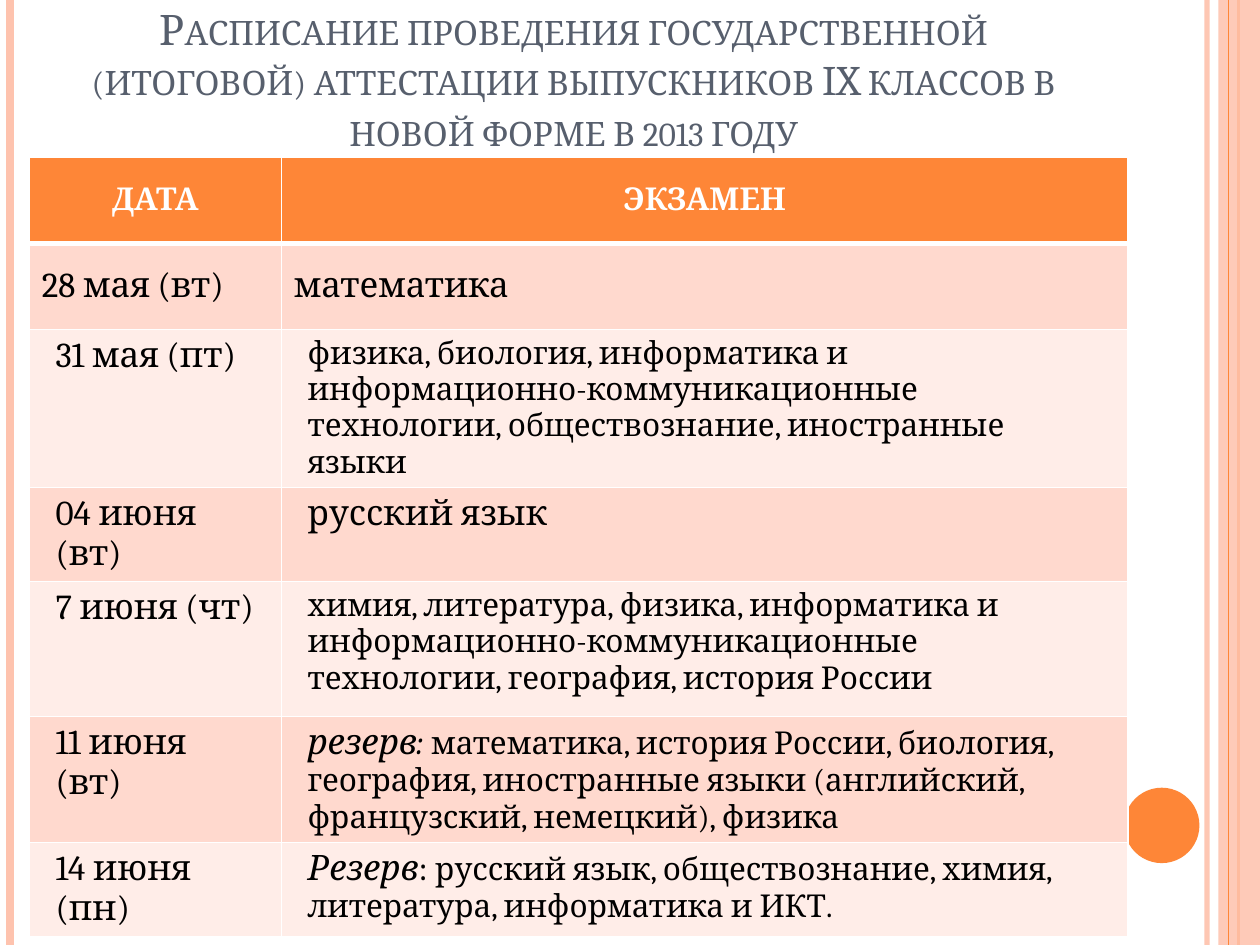
from lxml.etree import SubElement
from pptx import Presentation
from pptx.dml.color import RGBColor
from pptx.enum.shapes import MSO_CONNECTOR, MSO_SHAPE
from pptx.enum.text import MSO_ANCHOR, PP_ALIGN
from pptx.oxml.ns import qn
from pptx.util import Cm, Pt

COLORS = {
    "orange": "FE8637", "peach": "FEC3AE", "title": "575F6D", "white": "FFFFFF",
    "black": "000000", "odd": "FFD9CE", "even": "FFEDE8",
}
WIDTH, HEIGHT = 25.4, 19.05
TITLE = ("Расписание проведения государственной (итоговой) аттестации "
         "выпускников IX классов в новой форме в 2013 году")
EXAMS = [
    ("28 мая (вт)", [("математика", 20, False)]),
    ("31 мая (пт)", [("физика, биология, информатика и информационно-коммуникационные "
                      "технологии, обществознание, иностранные языки", 18, False)]),
    ("04 июня (вт)", [("русский язык", 20, False)]),
    ("7 июня (чт)", [("химия, литература, физика, информатика и информационно-коммуникационные "
                      "технологии, география, история России", 18, False)]),
    ("11 июня (вт)", [("резерв: ", 20, True),
                      ("математика, история России, биология, география, иностранные языки "
                       "(английский, французский, немецкий), физика", 18, False)]),
    ("14 июня (пн)", [("Резерв", 20, True), (": ", 20, False),
                      ("русский язык, обществознание, химия, литература, "
                       "информатика и ИКТ.", 18, False)]),
]
COLUMNS = [5.08, 17.07]
ROWS = [1.73, 1.73, 2.72, 1.9, 2.72, 1.9, 1.9]


class SlideBuilder:
    """Draws styled elements on the current slide."""

    def __init__(self, slide, font="Cambria"):
        self.slide = slide
        self.font = font

    def color(self, name):
        return RGBColor.from_string(COLORS[name])

    def style(self, font, size, color, bold=False, italic=False):
        font.name, font.size = self.font, Pt(size)
        font.bold, font.italic = bold, italic
        font.color.rgb = self.color(color)

    def set_alpha(self, element, percent):
        clr = next(element.iter(qn("a:srgbClr")))
        SubElement(clr, qn("a:alpha")).set("val", str(percent * 1000))

    def title(self, text, x, y, w, h):
        sp = self.slide.shapes.title
        sp.left, sp.top, sp.width, sp.height = Cm(x), Cm(y), Cm(w), Cm(h)
        tf = sp.text_frame
        tf.word_wrap, tf.vertical_anchor = True, MSO_ANCHOR.MIDDLE
        p = tf.paragraphs[0]
        p.alignment = PP_ALIGN.CENTER
        self.style(p.font, 24, "title")
        r = p.add_run()
        r.text = text
        r._r.get_or_add_rPr().set("cap", "small")

    def stripe(self, x, color, width, alpha=100):
        line = self.slide.shapes.add_connector(
            MSO_CONNECTOR.STRAIGHT, Cm(x), Cm(0), Cm(x), Cm(HEIGHT))
        line.line.color.rgb = self.color(color)
        line.line.width = Pt(width)
        if alpha < 100:
            self.set_alpha(line._element.spPr, alpha)
        SubElement(line._element.spPr, qn("a:effectLst"))

    def shape(self, kind, x, y, w, h, color, alpha=100):
        sp = self.slide.shapes.add_shape(kind, Cm(x), Cm(y), Cm(w), Cm(h))
        sp.shadow.inherit = False
        sp.fill.solid()
        sp.fill.fore_color.rgb = self.color(color)
        sp.line.fill.background()
        if alpha < 100:
            self.set_alpha(sp._element.spPr, alpha)

    def table(self, x, y, columns, rows):
        table = self.slide.shapes.add_table(
            len(rows), len(columns), Cm(x), Cm(y), Cm(sum(columns)), Cm(sum(rows))).table
        for column, width in zip(table.columns, columns):
            column.width = Cm(width)
        for row, height in zip(table.rows, rows):
            row.height = Cm(height)
        return table

    def cell(self, cell, runs, fill, color="black", header=False, middle=False):
        tc_pr = cell._tc.get_or_add_tcPr()
        for side in "LRTB":
            width = 3 if header and side == "B" else 1
            ln = SubElement(tc_pr, qn(f"a:ln{side}"), w=str(Pt(width)))
            SubElement(SubElement(ln, qn("a:solidFill")), qn("a:srgbClr"), val=COLORS["white"])
        cell.fill.solid()
        cell.fill.fore_color.rgb = self.color(fill)
        cell.vertical_anchor = MSO_ANCHOR.MIDDLE if middle else MSO_ANCHOR.TOP
        if not middle:
            cell.margin_left = cell.margin_right = Cm(0.53)
        p = cell.text_frame.paragraphs[0]
        p.alignment = PP_ALIGN.CENTER if header else PP_ALIGN.LEFT
        for text, size, italic in runs:
            r = p.add_run()
            r.text = text
            font = p.font if len(runs) == 1 else r.font
            self.style(font, size, color, header, italic)


def main():
    prs = Presentation()
    prs.slide_width, prs.slide_height = Cm(WIDTH), Cm(HEIGHT)
    s = SlideBuilder(prs.slides.add_slide(prs.slide_layouts[5]))

    s.stripe(24.33, "peach", 3, 93)
    s.stripe(0.2, "peach", 4.5)
    s.stripe(24.97, "orange", 1.5)
    s.shape(MSO_SHAPE.RECTANGLE, 24.56, 0, 0.84, HEIGHT, "peach", 87)
    s.stripe(24.77, "orange", 0.75)
    s.shape(MSO_SHAPE.OVAL, 22.66, 15.88, 1.52, 1.52, "orange")
    s.title(TITLE, 1.19, 0, 20.75, 3.18)

    table = s.table(0.59, 3.18, COLUMNS, ROWS)
    for col, heading in enumerate(("ДАТА", "ЭКЗАМЕН")):
        s.cell(table.cell(0, col), [(heading, 18, False)], "orange", "white", True, True)
    for row, (date, exam) in enumerate(EXAMS, start=1):
        fill = "odd" if row % 2 else "even"
        for col, runs in enumerate(([(date, 20, False)], exam)):
            s.cell(table.cell(row, col), runs, fill, middle=row == 1)

    prs.save("out.pptx")


if __name__ == "__main__":
    main()
